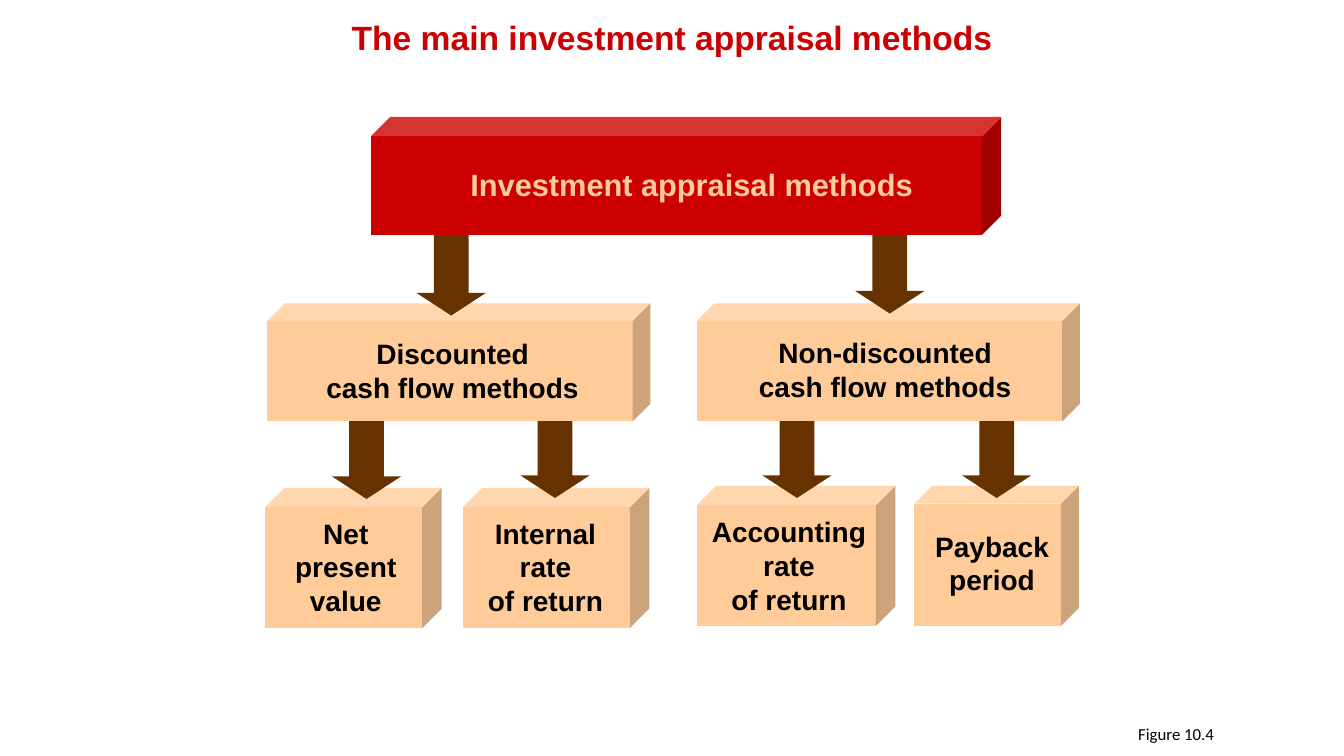
from dataclasses import dataclass

from pptx import Presentation
from pptx.dml.color import RGBColor
from pptx.enum.shapes import MSO_SHAPE
from pptx.enum.text import MSO_ANCHOR, PP_ALIGN
from pptx.util import Inches, Pt


@dataclass(frozen=True)
class Theme:
    """Colours, fonts and type sizes of the slide."""
    red: RGBColor = RGBColor(0xCC, 0x00, 0x00)
    peach: RGBColor = RGBColor(0xFF, 0xCC, 0x99)
    brown: RGBColor = RGBColor(0x66, 0x33, 0x00)
    black: RGBColor = RGBColor(0x00, 0x00, 0x00)
    heading_font: str = "Arial"
    caption_font: str = "Calibri"
    title_size: int = 24
    root_size: int = 22
    node_size: int = 20
    caption_size: int = 12


THEME = Theme()
ARROW_SIZE = (0.69, 0.89)
BRANCH_SIZE = (3.8, 1.17)
METHOD_HEIGHT = 1.39

METHODS = [
    (9.07, 4.82, 1.63, 0.127, "Payback period", (9.04, 5.2, 1.6, 0.77)),
    (6.91, 4.82, 1.97, 0.138, "Accounting rate\nof return", (6.95, 5.06, 1.75, 1.1)),
    (2.63, 4.84, 1.75, 0.138, "Net present value", (2.63, 5.07, 1.6, 1.1)),
    (4.59, 4.84, 1.85, 0.138, "Internal rate\nof return", (4.7, 5.07, 1.42, 1.1)),
]
METHOD_ARROWS = [(3.29, 4.06), (5.16, 4.05), (7.56, 4.05), (9.54, 4.05)]
BRANCHES = [
    (6.91, 3.01, "Non-discounted\ncash flow methods", (7.15, 3.28, 3.26, 0.77)),
    (2.65, 3.01, "Discounted\ncash flow methods", (2.86, 3.29, 3.26, 0.77)),
]
BRANCH_ARROWS = [(8.48, 2.22), (4.13, 2.24)]


def write_text(frame, text, size, color, **options):
    """Fill a text frame with one formatted paragraph."""
    frame.word_wrap = True
    frame.vertical_anchor = MSO_ANCHOR.TOP
    para = frame.paragraphs[0]
    para.text = text.replace("\n", "\v")
    para.alignment = options.pop("alignment", PP_ALIGN.CENTER)
    para.space_before = Pt(0)
    formats = {"name": THEME.heading_font, "size": Pt(size), "bold": True, **options}
    for span in para.runs:
        for name, value in formats.items():
            setattr(span.font, name, value)
        span.font.color.rgb = color


def add_label(page, area, text, size, color, **options):
    """Add a text box over the given area."""
    box = page.shapes.add_textbox(*map(Inches, area))
    write_text(box.text_frame, text, size, color, **options)


def add_solid(page, kind, area, color, adjustments):
    """Add a filled preset shape without outline or shadow."""
    shape = page.shapes.add_shape(kind, *map(Inches, area))
    shape.shadow.inherit = False
    shape.fill.solid()
    shape.fill.fore_color.rgb = color
    shape.line.fill.background()
    for index, value in enumerate(adjustments):
        shape.adjustments[index] = value


def add_block(page, area, depth, color):
    """Add a cube that stands for one group of methods."""
    add_solid(page, MSO_SHAPE.CUBE, area, color, [depth])


def add_arrows(page, places):
    """Add a row of equal arrows pointing down."""
    for place in places:
        add_solid(page, MSO_SHAPE.DOWN_ARROW, (*place, *ARROW_SIZE), THEME.brown, [0.5, 0.326])


def add_title(page, text):
    """Place and format the slide title."""
    title = page.shapes.title
    area = {"left": 2.78, "top": 0.12, "width": 7.77, "height": 0.5}
    for name, value in area.items():
        setattr(title, name, Inches(value))
    write_text(title.text_frame, text, THEME.title_size, THEME.red)


def main():
    """Build the slide and save it."""
    deck = Presentation()
    deck.slide_width, deck.slide_height = Inches(13.33), Inches(7.5)
    page = deck.slides.add_slide(deck.slide_layouts[5])
    add_title(page, "The main investment appraisal methods")

    for left, top, width, depth, text, area in METHODS:
        add_block(page, (left, top, width, METHOD_HEIGHT), depth, THEME.peach)
    add_arrows(page, METHOD_ARROWS)
    for left, top, text, area in BRANCHES:
        add_block(page, (left, top, *BRANCH_SIZE), 0.149, THEME.peach)
    add_arrows(page, BRANCH_ARROWS)
    add_block(page, (3.68, 1.16, 6.25, 1.17), 0.163, THEME.red)

    add_label(page, (4.47, 1.59, 4.78, 0.47), "Investment appraisal methods",
              THEME.root_size, THEME.peach)
    for *_, text, area in BRANCHES + METHODS:
        add_label(page, area, text, THEME.node_size, THEME.black)
    add_label(page, (11.19, 7.13, 1.1, 0.3), "Figure 10.4", THEME.caption_size, THEME.black,
              name=THEME.caption_font, bold=False, alignment=PP_ALIGN.LEFT)
    deck.save("out.pptx")


if __name__ == "__main__":
    main()
